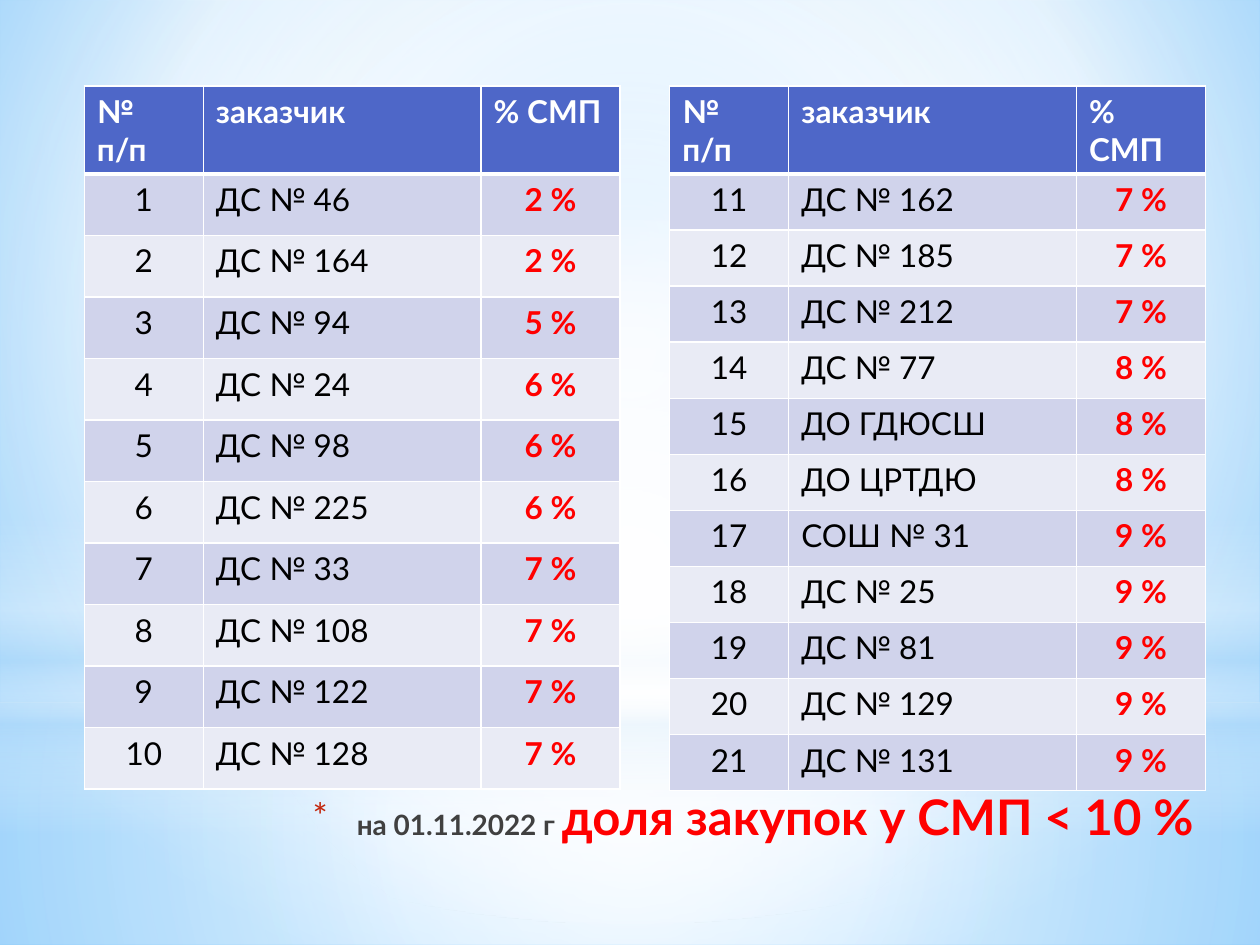
from lxml.etree import SubElement as Sub
from pptx import Presentation
from pptx.dml.color import RGBColor
from pptx.enum.shapes import MSO_SHAPE as Preset
from pptx.enum.text import MSO_ANCHOR as Anchor, MSO_AUTO_SIZE as AutoSize, PP_ALIGN as Align
from pptx.oxml.ns import qn
from pptx.util import Cm, Pt

FONT = "Lato"
RED = "FF0000"
HEADINGS = ("№ п/п", "заказчик", "% СМП")
ALIGNMENTS = (Align.CENTER, Align.LEFT, Align.CENTER)
HEADING_FORMAT = {"name": FONT, "size": Pt(18), "bold": True, "color": "FFFFFF"}
PLAIN_FORMAT = {**HEADING_FORMAT, "bold": False, "color": "000000"}
SHARE_FORMAT = {**HEADING_FORMAT, "color": RED}
BODY_FORMATS = (PLAIN_FORMAT, PLAIN_FORMAT, SHARE_FORMAT)
BAND_COLORS = ("E9EBF5", "D0D3EB")

LOWEST_SHARES = (
    ("ДС № 46", 2), ("ДС № 164", 2), ("ДС № 94", 5), ("ДС № 24", 6),
    ("ДС № 98", 6), ("ДС № 225", 6), ("ДС № 33", 7), ("ДС № 108", 7),
    ("ДС № 122", 7), ("ДС № 128", 7),
)
HIGHER_SHARES = (
    ("ДС № 162", 7), ("ДС № 185", 7), ("ДС № 212", 7), ("ДС № 77", 8),
    ("ДО ГДЮСШ", 8), ("ДО ЦРТДЮ", 8), ("СОШ № 31", 9), ("ДС № 25", 9),
    ("ДС № 81", 9), ("ДС № 129", 9), ("ДС № 131", 9),
)

BACKDROP = ((0, "9ED5FF", 100), (60, "FFFFFF", 100), (100, "5BB9FF", 100))
CENTER = (50, 50, 50, 50)
GLOWS = (
    (Preset.RECTANGLE, 14.17, 4.88, CENTER,
     ((0, "FFFFFF", 91), (37, "FFFFFF", 76), (100, "B4DCFA", 79))),
    (Preset.RECTANGLE, 0, 14.17, CENTER,
     ((0, "FFFFFF", 89), (48, "FFFFFF", 62), (100, "B4DCFA", 79))),
    (Preset.RECTANGLE, 10.46, 6.35, None,
     ((0, "FFFFFF", 0), (29, "FFFFFF", 30), (45, "B4DCFA", 40),
      (55, "FFFFFF", 26), (65, "B4DCFA", 60), (100, "FFFFFF", 0))),
    (Preset.OVAL, 4.45, 14.17, CENTER, ((0, "FFFFFF", 100), (56, "FFFFFF", 0))),
)


def rgb(color):
    """Turn a hex string into a colour."""
    return RGBColor.from_string(color)


def fill_gradient(fill, parent, stops, focus):
    """Fill with a gradient, round a focus or, without one, from top to bottom."""
    fill.solid()
    gradient = parent.makeelement(qn("a:gradFill"), {"rotWithShape": "1"})
    stop_list = Sub(gradient, qn("a:gsLst"))
    for position, color, opacity in stops:
        stop = Sub(stop_list, qn("a:gs"), pos=str(position * 1000))
        shade = Sub(stop, qn("a:srgbClr"), val=color)
        Sub(shade, qn("a:alpha"), val=str(opacity * 1000))
    if focus:
        circle = Sub(gradient, qn("a:path"), {"path": "circle"})
        edges = {side: str(inset * 1000) for side, inset in zip("ltrb", focus)}
        Sub(circle, qn("a:fillToRect"), edges)
    else:
        Sub(gradient, qn("a:lin"), ang="5400000", scaled="0")
    parent.replace(parent.find(qn("a:solidFill")), gradient)


def add_glow(slide, preset, top, height, focus, stops):
    """Add one translucent part of the backdrop, as wide as the slide."""
    glow = slide.shapes.add_shape(preset, 0, Cm(top), Cm(25.4), Cm(height))
    glow.shadow.inherit = False
    glow.line.fill.background()
    fill_gradient(glow.fill, glow._element.spPr, stops, focus)


def add_run(paragraph, text, style):
    """Add a run formatted by a dict of font values."""
    run = paragraph.add_run()
    run.text = text
    for key, value in style.items():
        if key == "color":
            run.font.color.rgb = rgb(value)
        else:
            setattr(run.font, key, value)


def fill_title(slide):
    """Place the bulleted conclusion in the title, in front of the backdrop."""
    title = slide.shapes.title
    slide.shapes._spTree.append(title._element)
    place = {"left": Cm(5.31), "top": Cm(15.72), "width": Cm(19), "height": Cm(2.01)}
    for key, value in place.items():
        setattr(title, key, value)
    frame_format = {"word_wrap": True, "auto_size": AutoSize.NONE,
                    "vertical_anchor": Anchor.TOP}
    for key, value in frame_format.items():
        setattr(title.text_frame, key, value)
    conclusion = title.text_frame.paragraphs[0]
    conclusion.alignment = Align.RIGHT
    properties = conclusion._p.get_or_add_pPr()
    properties.set("marL", str(Cm(0.89)))
    properties.set("indent", str(Cm(-0.89)))
    Sub(Sub(properties, qn("a:buClr")), qn("a:srgbClr"), val="C3260C")
    Sub(properties, qn("a:buSzPct"), val="128000")
    Sub(properties, qn("a:buFont"), typeface=FONT)
    Sub(properties, qn("a:buChar"), char="*")
    date_format = {"name": FONT, "size": Pt(16), "bold": True, "color": "404040"}
    add_run(conclusion, "на 01.11.2022 г ", date_format)
    add_run(conclusion, "доля закупок у СМП < 10 %",
            {**date_format, "size": Pt(28), "color": RED})


def fill_cell(cell, text, style, alignment, background, borders):
    """Write a cell with its fill and white borders."""
    paragraph = cell.text_frame.paragraphs[0]
    paragraph.alignment = alignment
    add_run(paragraph, text, style)
    properties = cell._tc.get_or_add_tcPr()
    for side, width in borders.items():
        border = Sub(properties, qn(f"a:ln{side}"), w=str(Pt(width)))
        Sub(Sub(border, qn("a:solidFill")), qn("a:srgbClr"), val="FFFFFF")
    cell.fill.solid()
    cell.fill.fore_color.rgb = rgb(background)


def add_share_table(slide, left, widths, row_height, first_number, shares):
    """Add a numbered table of customers and their shares."""
    row_count = len(shares) + 1
    table = slide.shapes.add_table(
        row_count, len(HEADINGS), Cm(left), Cm(1.73),
        Cm(sum(widths)), Cm(row_height * row_count)).table
    for column, width in zip(table.columns, widths):
        column.width = Cm(width)
    thin = dict.fromkeys("LRTB", 1)
    for column, heading in enumerate(HEADINGS):
        fill_cell(table.cell(0, column), heading, HEADING_FORMAT, Align.LEFT,
                  "4E67C8", {**thin, "B": 3})
    for row, (customer, share) in enumerate(shares, 1):
        texts = (str(first_number + row - 1), customer, f"{share} %")
        borders = {**thin, "T": 3 if row == 1 else 1}
        for column, text in enumerate(texts):
            fill_cell(table.cell(row, column), text, BODY_FORMATS[column],
                      ALIGNMENTS[column], BAND_COLORS[row % 2], borders)


def main():
    """Build and save the slide."""
    deck = Presentation()
    deck.slide_width, deck.slide_height = Cm(25.4), Cm(19.05)
    slide = deck.slides.add_slide(deck.slide_layouts[5])
    backdrop = slide.background.fill
    fill_gradient(backdrop, slide._element.find(f".//{qn('p:bgPr')}"),
                  BACKDROP, (20, 10, 20, 60))
    for glow in GLOWS:
        add_glow(slide, *glow)
    fill_title(slide)
    add_share_table(slide, 1.7, (2.4, 5.6, 2.8), 1.24, 1, LOWEST_SHARES)
    add_share_table(slide, 13.5, (2.4, 5.8, 2.6), 1.13,
                    len(LOWEST_SHARES) + 1, HIGHER_SHARES)
    deck.save("out.pptx")


if __name__ == "__main__":
    main()
